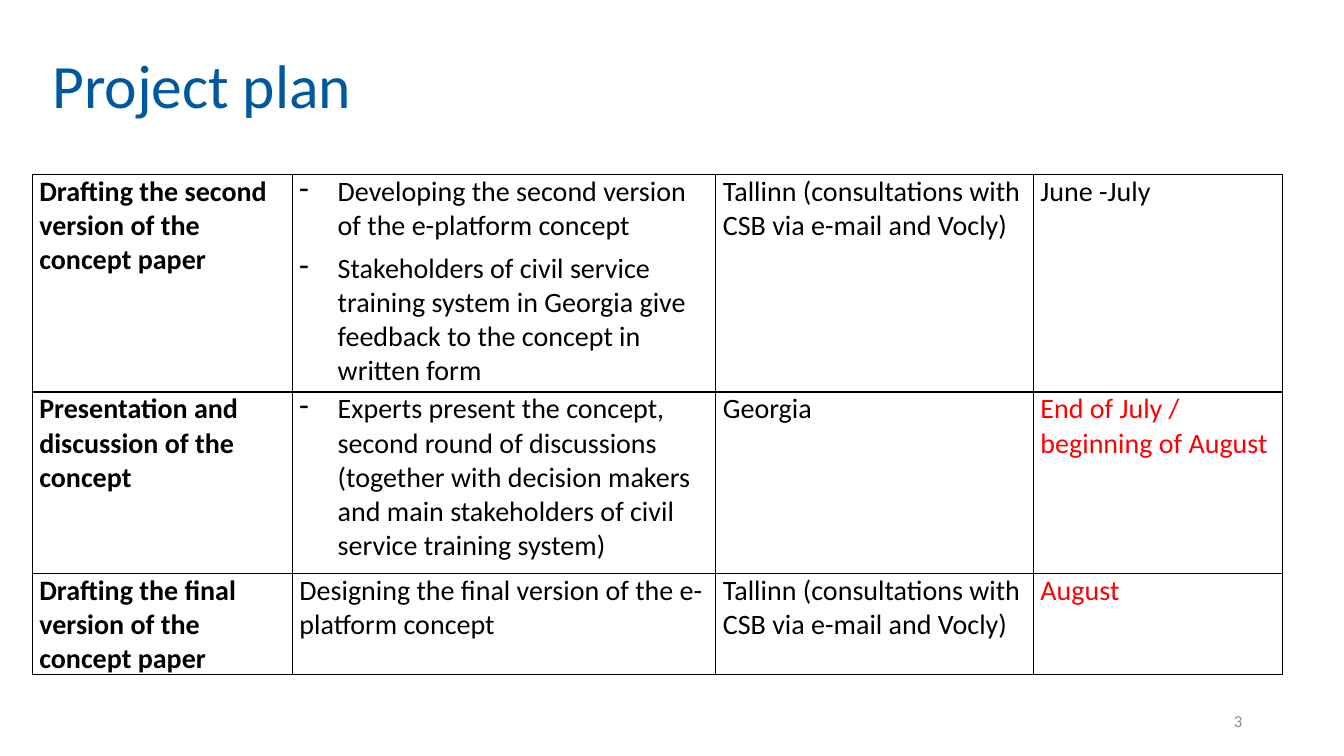
import pptx
import pptx.dml.color
import pptx.enum.text
import pptx.oxml
import pptx.oxml.ns
import pptx.util

Inches, Pt = pptx.util.Inches, pptx.util.Pt
Align, Anchor = pptx.enum.text.PP_ALIGN, pptx.enum.text.MSO_ANCHOR

THEME = {
    "font": "Calibri",
    "title": "00599D", "text": "000000", "alert": "FF0000", "number": "8C8C8C",
    "border": "000000",
    "title_size": 44, "table_size": 20, "number_size": 12, "border_width": 1,
}

TITLE = "Project plan"
PAGE_NUMBER = "3"
# Each row: stage, activities (a list is dashed), place, time, colour of time
PLAN = [
    ("Drafting the second version of the concept paper",
     ["Developing the second version of the e-platform concept",
      "Stakeholders of civil service training system in Georgia give feedback "
      "to the concept in written form"],
     "Tallinn (consultations with CSB via e-mail and Vocly)",
     "June -July", "text"),
    ("Presentation and discussion of the concept",
     ["Experts present the concept, second round of discussions (together with "
      "decision makers and main stakeholders of civil service training system)"],
     "Georgia",
     "End of July / beginning of August", "alert"),
    ("Drafting the final version of the concept paper",
     "Designing the final version of the e-platform concept",
     "Tallinn (consultations with CSB via e-mail and Vocly)",
     "August", "alert"),
]
COLUMN_WIDTHS = [2.58, 4.2, 3.15, 2.47]
ROW_HEIGHTS = [2.16, 1.8, 1.0]
TABLE_LEFT, TABLE_TOP = 0.32, 1.73
DASH_INDENT = 0.38


def apply(target, values):
    for name, value in values.items():
        setattr(target, name, value)


def write(para, text, size, color, bold=False):
    span = para.add_run()
    span.text = text
    apply(span.font, {"name": THEME["font"], "size": Pt(THEME[size]), "bold": bold})
    span.font.color.rgb = pptx.dml.color.RGBColor.from_string(THEME[color])


def add_label(page, place, text, size, color, para_format):
    box = page.shapes.add_textbox(*map(Inches, place))
    apply(box.text_frame, {"word_wrap": True, "vertical_anchor": Anchor.MIDDLE})
    para = box.text_frame.paragraphs[0]
    apply(para, para_format)
    write(para, text, size, color)


def add_dash(para):
    """Give the paragraph a hanging dash bullet."""
    properties = para._p.get_or_add_pPr()
    indent = Inches(DASH_INDENT)
    properties.set("marL", str(indent))
    properties.set("indent", str(-indent))
    properties.append(pptx.oxml.parse_xml(
        f'<a:buChar {pptx.oxml.ns.nsdecls("a")} char="-"/>'))


def add_borders(cell):
    properties = cell._tc.get_or_add_tcPr()
    for index, side in enumerate("LRTB"):
        properties.insert(index, pptx.oxml.parse_xml(
            f'<a:ln{side} {pptx.oxml.ns.nsdecls("a")} w="{Pt(THEME["border_width"])}">'
            f'<a:solidFill><a:srgbClr val="{THEME["border"]}"/></a:solidFill>'
            f'</a:ln{side}>'))


def fill_cell(cell, content, color, bold):
    apply(cell, {"margin_left": Inches(0.07), "margin_right": Inches(0.07),
                 "margin_top": 0, "margin_bottom": 0})
    cell.fill.background()
    add_borders(cell)
    dashed = isinstance(content, list)
    frame = cell.text_frame
    for index, text in enumerate(content if dashed else [content]):
        para = frame.add_paragraph() if index else frame.paragraphs[0]
        apply(para, {"space_before": Pt(3), "space_after": Pt(3)})
        if dashed:
            add_dash(para)
        write(para, text, "table_size", color, bold)


def add_plan(page):
    table = page.shapes.add_table(
        len(ROW_HEIGHTS), len(COLUMN_WIDTHS), Inches(TABLE_LEFT), Inches(TABLE_TOP),
        Inches(sum(COLUMN_WIDTHS)), Inches(sum(ROW_HEIGHTS))).table
    apply(table, {"first_row": False, "horz_banding": False})
    for column, width in zip(table.columns, COLUMN_WIDTHS):
        column.width = Inches(width)
    for row, height, (*contents, time_color) in zip(table.rows, ROW_HEIGHTS, PLAN):
        row.height = Inches(height)
        colors = ["text"] * 3 + [time_color]
        for index, (cell, content) in enumerate(zip(row.cells, contents)):
            fill_cell(cell, content, colors[index], bold=index == 0)


def main():
    deck = pptx.Presentation()
    apply(deck, {"slide_width": Inches(13.33), "slide_height": Inches(7.5)})
    page = deck.slides.add_slide(deck.slide_layouts[6])
    add_label(page, (0.42, 0.15, 11.5, 1.45), TITLE, "title_size", "title",
              {"line_spacing": 0.9})
    add_label(page, (9.42, 6.95, 3, 0.4), PAGE_NUMBER, "number_size", "number",
              {"alignment": Align.RIGHT})
    add_plan(page)
    deck.save("out.pptx")


if __name__ == "__main__":
    main()
